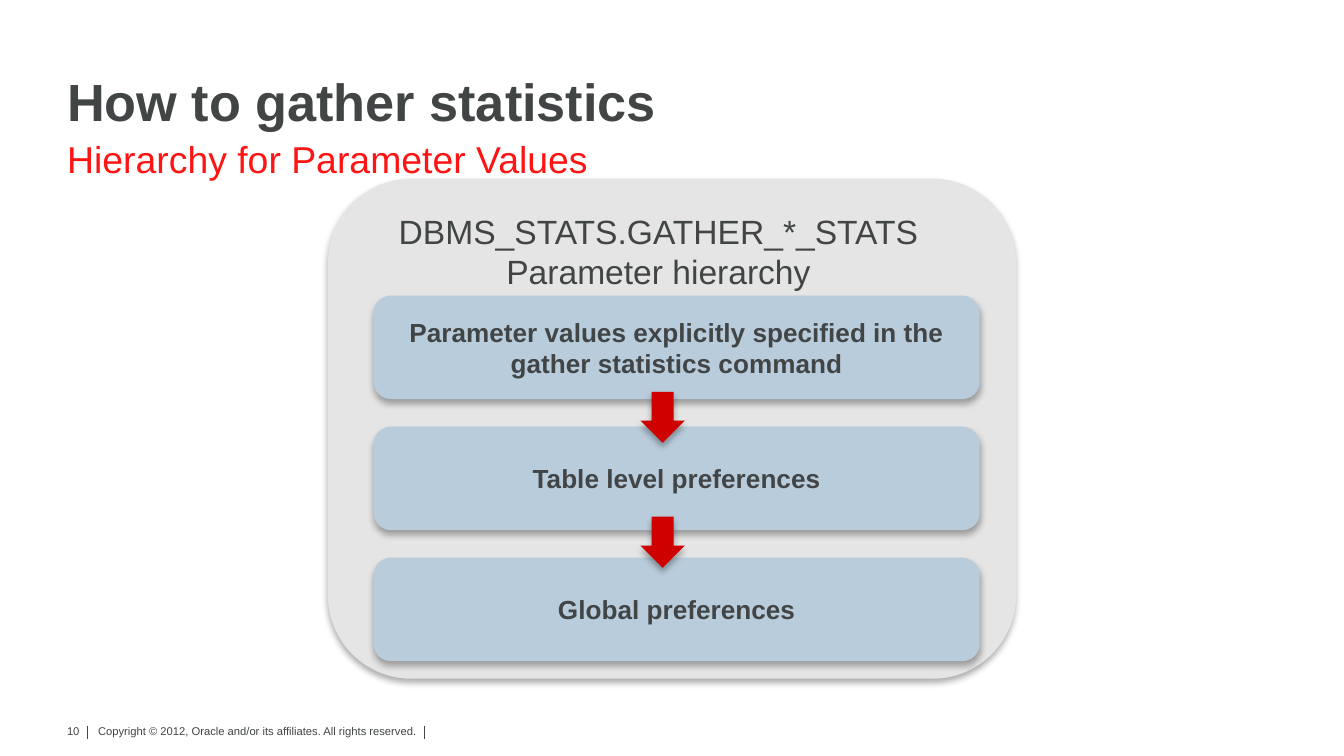
from lxml import etree
from pptx import Presentation
from pptx import util as u
from pptx.dml.color import RGBColor
from pptx.enum import shapes, text
from pptx.oxml.ns import qn

TITLE = "How to gather statistics"
SUBTITLE = "Hierarchy for Parameter Values"
HEADING = "DBMS_STATS.GATHER_*_STATS\vParameter hierarchy"
LEVELS = [
    "Parameter values explicitly specified in the gather statistics command",
    "Table level preferences",
    "Global preferences",
]
PAGE = "10"
COPYRIGHT = "Copyright © 2012, Oracle and/or its affiliates. All rights reserved."

THEME = {
    "font": "Arial",
    "ink": "424545", "accent": "FF1414", "panel": "E5E5E5",
    "level": "B9CCDB", "arrow": "CE0000", "shadow": "000000",
    "title": 28, "subtitle": 20, "heading": 18, "body": 14, "footer": 6,
}
PANEL = (2.44, 1.33, 5.12, 3.72)
LEVEL_LEFT, LEVEL_TOP, LEVEL_W, LEVEL_H = 2.78, 2.2, 4.51, 0.77
LEVEL_STEP = (4.15 - LEVEL_TOP) / (len(LEVELS) - 1)
ARROW_LEFT, ARROW_TOP, ARROW_W, ARROW_H, ARROW_STEP = 4.74, 2.94, 0.38, 0.33, 0.93
SHAPE = shapes.MSO_SHAPE
ALIGN = text.PP_ALIGN
ANCHOR = text.MSO_ANCHOR


def color(name):
    return RGBColor.from_string(THEME[name])


def inches(*values):
    return [u.Inches(v) for v in values]


def write(sp, words, size, ink="ink", bold=False, align=ALIGN.LEFT,
          margins=(0.1, 0.05, 0.1, 0.05), **frame):
    tf = sp.text_frame
    sides = ("margin_left", "margin_top", "margin_right", "margin_bottom")
    values = {"word_wrap": True, "vertical_anchor": ANCHOR.TOP,
              **dict(zip(sides, inches(*margins))), **frame}
    for name, value in values.items():
        setattr(tf, name, value)
    p = tf.paragraphs[0]
    p.text = words
    p.alignment = align
    for r in p.runs:
        for name, value in {"name": THEME["font"], "size": u.Pt(THEME[size]),
                            "bold": bold}.items():
            setattr(r.font, name, value)
        r.font.color.rgb = color(ink)
    return p


def add_text(s, box, *args, **kwargs):
    return write(s.shapes.add_textbox(*inches(*box)), *args, **kwargs)


def add_raised(s, kind, box, fill):
    """Add a borderless shape with a soft shadow below it."""
    sp = s.shapes.add_shape(kind, *inches(*box))
    sp.fill.solid()
    sp.fill.fore_color.rgb = color(fill)
    sp.line.fill.background()
    sp.shadow.inherit = False
    effects = sp._element.spPr.find(qn("a:effectLst"))
    shadow = etree.SubElement(effects, qn("a:outerShdw"), blurRad=str(u.Pt(3.5)),
                              dist=str(u.Pt(2.2)), dir="5400000", rotWithShape="0")
    shade = etree.SubElement(shadow, qn("a:srgbClr"), val=THEME["shadow"])
    etree.SubElement(shade, qn("a:alpha"), val="32000")
    return sp


def add_footer(s):
    add_text(s, (0.69, 5.37, 2.74, 0.24), COPYRIGHT, "footer",
             margins=(0.04, 0.02, 0.04, 0.02))
    for x in (0.65, 3.16):
        rule = s.shapes.add_connector(shapes.MSO_CONNECTOR.STRAIGHT,
                                      *inches(x, 5.4, x, 5.5))
        rule.line.color.rgb = color("ink")
        rule.line.width = u.Pt(0.5)
        etree.SubElement(rule._element.spPr, qn("a:effectLst"))
    add_text(s, (0.39, 5.34, 0.3, 0.2), PAGE, "footer", align=ALIGN.RIGHT,
             word_wrap=False)


def add_titles(s):
    title = s.shapes.title
    title.left, title.top, title.width, title.height = inches(0.5, 0.53, 9, 0.46)
    p = write(title, TITLE, "title", bold=True, margins=(0, 0, 0, 0),
              vertical_anchor=ANCHOR.BOTTOM, auto_size=text.MSO_AUTO_SIZE.NONE)
    p.line_spacing = 0.9
    add_text(s, (0.5, 1.01, 9, 0.33), SUBTITLE, "subtitle", "accent",
             margins=(0, 0, 0, 0))


def add_hierarchy(s):
    add_raised(s, SHAPE.ROUNDED_RECTANGLE, PANEL, "panel")
    add_text(s, (2.71, 1.52, 4.38, 0.71), HEADING, "heading", align=ALIGN.CENTER)
    for i, label in enumerate(LEVELS):
        box = (LEVEL_LEFT, LEVEL_TOP + i * LEVEL_STEP, LEVEL_W, LEVEL_H)
        sp = add_raised(s, SHAPE.ROUNDED_RECTANGLE, box, "level")
        write(sp, label, "body", bold=True, align=ALIGN.CENTER,
              vertical_anchor=ANCHOR.MIDDLE)
    for i in range(len(LEVELS) - 1):
        box = (ARROW_LEFT, ARROW_TOP + i * ARROW_STEP, ARROW_W, ARROW_H)
        add_raised(s, SHAPE.RIGHT_ARROW, box, "arrow").rotation = 90


def main():
    prs = Presentation()
    prs.slide_width = u.Inches(10)
    prs.slide_height = prs.slide_width * 9 // 16
    s = prs.slides.add_slide(prs.slide_layouts[5])
    add_footer(s)
    add_titles(s)
    add_hierarchy(s)
    prs.save("out.pptx")


if __name__ == "__main__":
    main()
